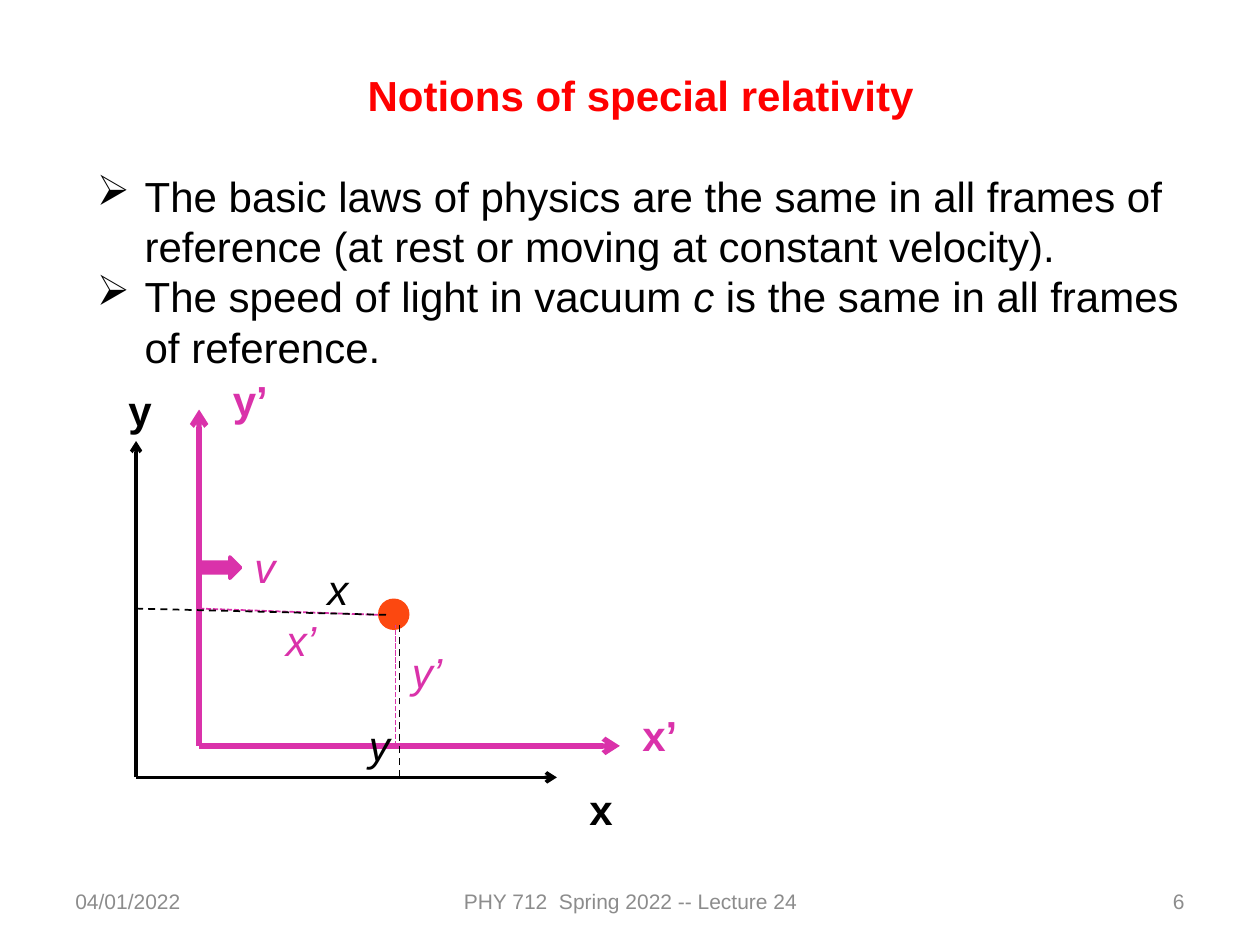
from dataclasses import dataclass

import pptx
import pptx.dml.color
import pptx.enum.dml
import pptx.enum.shapes
import pptx.enum.text
import pptx.oxml
import pptx.oxml.ns
import pptx.util

Inches = pptx.util.Inches
Align = pptx.enum.text.PP_ALIGN
Anchor = pptx.enum.text.MSO_ANCHOR
Dash = pptx.enum.dml.MSO_LINE
Shape = pptx.enum.shapes.MSO_SHAPE


@dataclass(frozen=True)
class Theme:
    font: str = "Arial"
    title: str = "FF0000"
    rest: str = "000000"
    moving: str = "DA32AA"
    particle: str = "FC4810"
    footer: str = "8C8C8C"
    body_size: int = 24
    footer_size: int = 12


def set_values(target, values):
    for name, value in values.items():
        setattr(target, name, value)


def add_element(parent, tag, **attributes):
    child = pptx.oxml.parse_xml(f"<{tag} {pptx.oxml.ns.nsdecls('a')}/>")
    for name, value in attributes.items():
        child.set(name, value)
    parent.append(child)


class SlideBuilder:
    """Draw styled elements on the current slide."""

    def __init__(self, slide, theme):
        self.slide = slide
        self.theme = theme

    def place(self, shape, box):
        names = ("left", "top", "width", "height")
        set_values(shape, dict(zip(names, map(Inches, box))))

    def add_run(self, paragraph, text, color, size=None, **font_values):
        run = paragraph.add_run()
        run.text = text
        size = pptx.util.Pt(size or self.theme.body_size)
        set_values(run.font, {"name": self.theme.font, "size": size, **font_values})
        run.font.color.rgb = pptx.dml.color.RGBColor.from_string(color)

    def frame(self, shape, anchor=Anchor.TOP):
        values = {
            "word_wrap": True,
            "auto_size": pptx.enum.text.MSO_AUTO_SIZE.NONE,
            "vertical_anchor": anchor,
        }
        set_values(shape.text_frame, values)
        return shape.text_frame

    def title(self, text, box):
        shape = self.slide.shapes.title
        self.place(shape, box)
        paragraph = self.frame(shape).paragraphs[0]
        paragraph.alignment = Align.CENTER
        self.add_run(paragraph, text, self.theme.title, bold=True)

    def text(self, text, box, color, align=Align.LEFT, anchor=Anchor.TOP, **font_values):
        shape = self.slide.shapes.add_textbox(*map(Inches, box))
        paragraph = self.frame(shape, anchor).paragraphs[0]
        paragraph.alignment = align
        self.add_run(paragraph, text, color, **font_values)

    def label(self, text, left, top, color, **font_values):
        self.text(text, (left, top, 0.5, 0.5), color, **font_values)

    def bullets(self, items, box, indent=0.38):
        frame = self.frame(self.slide.shapes.add_textbox(*map(Inches, box)))
        for index, runs in enumerate(items):
            paragraph = frame.add_paragraph() if index else frame.paragraphs[0]
            properties = paragraph._p.get_or_add_pPr()
            properties.set("marL", str(Inches(indent)))
            properties.set("indent", str(-Inches(indent)))
            add_element(properties, "a:buChar", char="➢")
            for text, italic in runs:
                self.add_run(paragraph, text, self.theme.rest, italic=italic)

    def line(self, start, end, color, width=1, dash=None, arrow=False, shapes=None):
        shapes = shapes or self.slide.shapes
        connector = shapes.add_connector(
            pptx.enum.shapes.MSO_CONNECTOR.STRAIGHT, *map(Inches, start + end)
        )
        connector.line.color.rgb = pptx.dml.color.RGBColor.from_string(color)
        set_values(connector.line, {"width": pptx.util.Pt(width), "dash_style": dash})
        properties = connector._element.spPr
        if arrow:
            add_element(properties.get_or_add_ln(), "a:tailEnd", type="arrow")
        add_element(properties, "a:effectLst")

    def axes(self, origin, color, width):
        left, bottom = origin
        shapes = self.slide.shapes.add_group_shape().shapes
        for end in ((left, bottom - 2.67), (left + 3.34, bottom)):
            self.line(origin, end, color, width, arrow=True, shapes=shapes)

    def shape(self, kind, box, color, outline=None):
        shape = self.slide.shapes.add_shape(kind, *map(Inches, box))
        shape.shadow.inherit = False
        rgb = pptx.dml.color.RGBColor.from_string(color)
        shape.fill.solid()
        shape.fill.fore_color.rgb = rgb
        if outline:
            shape.line.color.rgb = rgb
            shape.line.width = pptx.util.Pt(outline)
        else:
            shape.line.fill.background()


def main():
    theme = Theme()
    presentation = pptx.Presentation()
    set_values(presentation, {"slide_width": Inches(10), "slide_height": Inches(7.5)})
    slide = presentation.slides.add_slide(presentation.slide_layouts[5])
    builder = SlideBuilder(slide, theme)

    for text, left, width, align in (
        ("04/01/2022", 0.5, 2.33, Align.LEFT),
        ("PHY 712  Spring 2022 -- Lecture 24", 3.42, 3.17, Align.CENTER),
        ("6", 7.17, 2.33, Align.RIGHT),
    ):
        builder.text(text, (left, 6.95, width, 0.4), theme.footer, align,
                     Anchor.MIDDLE, size=theme.footer_size)

    builder.title("Notions of special relativity", (0.67, 0.5, 8.83, 0.5))
    builder.bullets(
        [
            [("The basic laws of physics are the same in all frames of reference "
              "(at rest or moving at constant velocity).", False)],
            [("The speed of light in vacuum ", False), ("c", True),
             (" is the same in all frames of reference.", False)],
        ],
        (0.67, 1.3, 8.83, 1.72),
    )

    builder.axes((1.08, 6.17), theme.rest, 2)
    builder.axes((1.58, 5.92), theme.moving, 3)
    builder.shape(Shape.RIGHT_ARROW, (1.58, 4.42, 0.33, 0.17), theme.moving, outline=2)
    builder.shape(Shape.OVAL, (3, 4.75, 0.25, 0.25), theme.particle)

    for start, end, color, dash in (
        ((1.58, 4.83), (3, 4.88), theme.moving, Dash.SQUARE_DOT),
        ((3.14, 5.92), (3.14, 4.96), theme.moving, Dash.SQUARE_DOT),
        ((3.17, 6.17), (3.17, 4.96), theme.rest, Dash.DASH),
        ((1.08, 4.83), (3.08, 4.88), theme.rest, Dash.DASH),
    ):
        builder.line(start, end, color, dash=dash)

    for text, left, top, color in (
        ("x", 4.58, 6.17, theme.rest),
        ("y", 0.92, 3, theme.rest),
        ("y’", 1.75, 2.92, theme.moving),
        ("x’", 5, 5.58, theme.moving),
    ):
        builder.label(text, left, top, color, bold=True)

    for text, left, top, color in (
        ("v", 1.92, 4.25, theme.moving),
        ("x’", 2.17, 4.83, theme.moving),
        ("y’", 3.17, 5.08, theme.moving),
        ("y", 2.83, 5.66, theme.rest),
        ("x", 2.5, 4.42, theme.rest),
    ):
        builder.label(text, left, top, color, italic=True)

    presentation.save("out.pptx")


if __name__ == "__main__":
    main()
